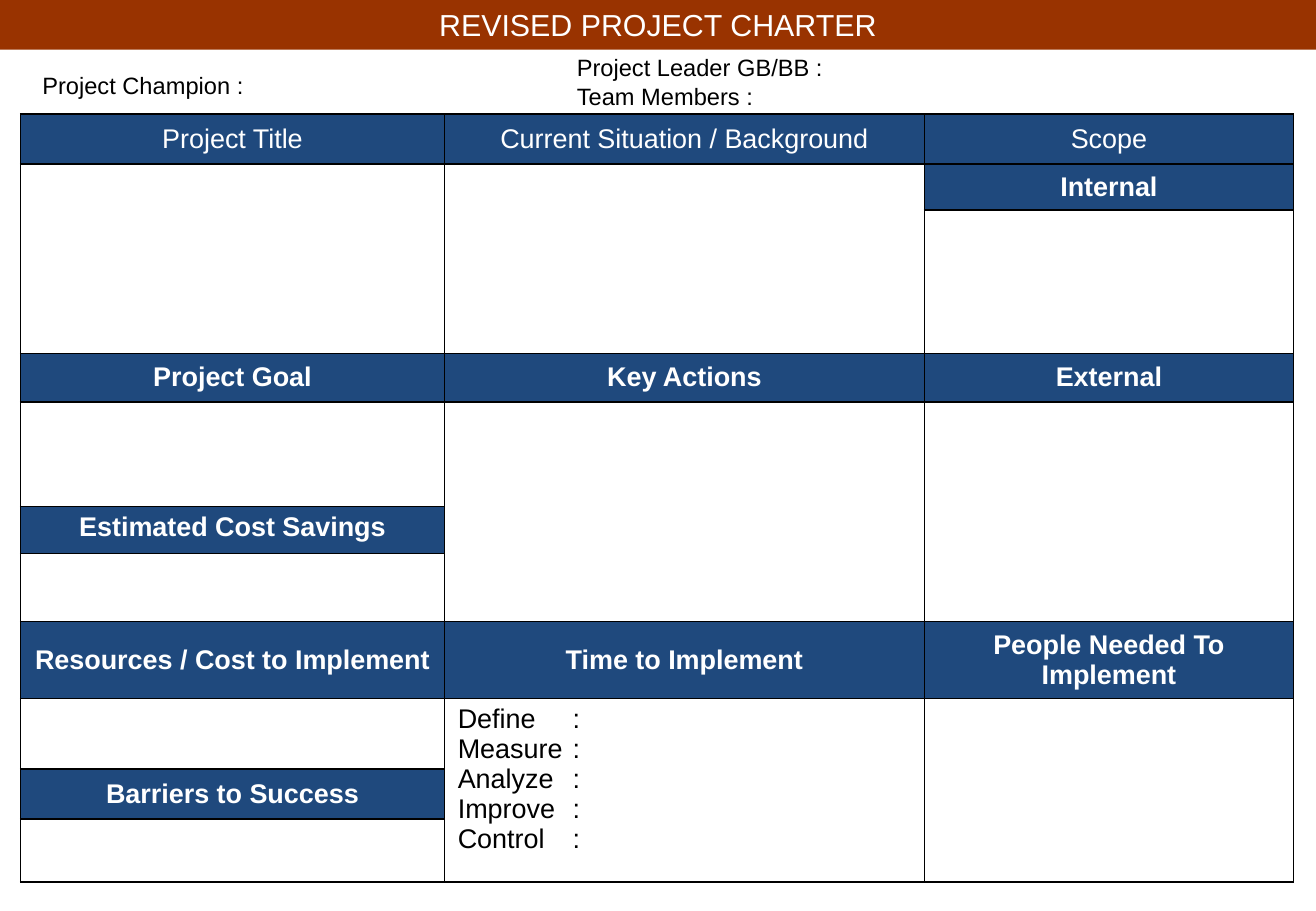
from pptx import Presentation
from pptx.dml.color import RGBColor
from pptx.enum.text import MSO_ANCHOR, MSO_AUTO_SIZE, PP_ALIGN
from pptx.oxml import parse_xml
from pptx.oxml.ns import nsdecls
from pptx.util import Pt

RUST = RGBColor(0x99, 0x33, 0x00)
NAVY = RGBColor(0x1F, 0x49, 0x7D)
WHITE = RGBColor(0xFF, 0xFF, 0xFF)
BLACK = RGBColor(0x00, 0x00, 0x00)

COLS = [251.3, 284.4, 218.9]
ROWS = [29.5, 27.4, 85, 28.8, 61.9, 28.1, 40.3, 45.6, 41.8, 29.5, 37.4]
HEADS = {
    (0, 0): "Project Title",
    (0, 1): "Current Situation / Background",
    (0, 2): "Scope",
    (1, 2): "Internal",
    (3, 0): "Project Goal",
    (3, 1): "Key Actions",
    (3, 2): "External",
    (5, 0): "Estimated Cost Savings",
    (7, 0): "Resources / Cost to Implement",
    (7, 1): "Time to Implement",
    (7, 2): "People Needed To\nImplement",
    (9, 0): "Barriers to Success",
}
SPANS = [((1, 0), (2, 0)), ((1, 1), (2, 1)), ((4, 1), (6, 1)),
         ((4, 2), (6, 2)), ((8, 1), (10, 1)), ((8, 2), (10, 2))]
PHASES = ["Define", "Measure", "Analyze", "Improve", "Control"]


def apply(item, style):
    for name, value in style.items():
        setattr(item, name, value)


class Chart:
    """Draws the project charter on one slide in a shared style."""

    def __init__(self):
        self.deck = Presentation()
        apply(self.deck, {"slide_width": Pt(780), "slide_height": Pt(540)})
        self.slide = self.deck.slides.add_slide(self.deck.slide_layouts[5])

    def text(self, frame, words, size, color, align=PP_ALIGN.LEFT, bold=False):
        frame.text = words
        for para in frame.paragraphs:
            para.alignment = align
            for run in para.runs:
                apply(run.font, {"name": "Arial", "size": Pt(size), "bold": bold})
                run.font.color.rgb = color

    def title(self, words):
        bar = self.slide.shapes.title
        apply(bar, {"left": 0, "top": 0, "width": Pt(780), "height": Pt(29.5)})
        bar.fill.solid()
        bar.fill.fore_color.rgb = RUST
        apply(bar.text_frame, {
            "margin_left": 0, "margin_right": 0,
            "margin_top": Pt(3.6), "margin_bottom": Pt(3.6),
            "vertical_anchor": MSO_ANCHOR.TOP, "word_wrap": True,
            "auto_size": MSO_AUTO_SIZE.NONE})
        self.text(bar.text_frame, words, 18, WHITE, PP_ALIGN.CENTER)

    def label(self, words, left, top, width, height):
        box = self.slide.shapes.add_textbox(Pt(left), Pt(top), Pt(width), Pt(height))
        apply(box.text_frame, {"word_wrap": False,
                               "auto_size": MSO_AUTO_SIZE.SHAPE_TO_FIT_TEXT})
        self.text(box.text_frame, words, 14, BLACK)

    def border(self, cell):
        props = cell._tc.get_or_add_tcPr()
        for side in "LRTB":
            props.append(parse_xml(
                f'<a:ln{side} {nsdecls("a")} w="{Pt(1)}"><a:solidFill>'
                f'<a:srgbClr val="{BLACK}"/></a:solidFill></a:ln{side}>'))

    def grid(self, left, top):
        frame = self.slide.shapes.add_table(
            len(ROWS), len(COLS), Pt(left), Pt(top), Pt(sum(COLS)), Pt(sum(ROWS)))
        table = frame.table
        apply(table, {"first_row": False, "horz_banding": False})
        for col, width in zip(table.columns, COLS):
            col.width = Pt(width)
        for r, height in enumerate(ROWS):
            table.rows[r].height = Pt(height)
            for c in range(len(COLS)):
                self.cell(table.cell(r, c), r, HEADS.get((r, c)))
        for start, end in SPANS:
            table.cell(*start).merge(table.cell(*end))
        return table

    def cell(self, cell, row, head):
        self.border(cell)
        cell.fill.solid()
        cell.fill.fore_color.rgb = NAVY if head else WHITE
        pad = Pt(3.6) if head else 0
        apply(cell, {"margin_left": Pt(7.9), "margin_right": Pt(7.9),
                     "margin_top": pad, "margin_bottom": pad})
        if head:
            cell.vertical_anchor = MSO_ANCHOR.TOP if row == 5 else MSO_ANCHOR.MIDDLE
            self.text(cell.text_frame, head, 16, WHITE, PP_ALIGN.CENTER, row > 0)

    def phases(self, cell):
        cell.margin_top = Pt(3.6)
        self.text(cell.text_frame, "\n".join(f"{name}\t:" for name in PHASES), 16, BLACK)
        for para in cell.text_frame.paragraphs:
            para._p.get_or_add_pPr().append(parse_xml(
                f'<a:tabLst {nsdecls("a")}><a:tab pos="{Pt(68)}" algn="l"/></a:tabLst>'))


def main():
    chart = Chart()
    chart.title("REVISED PROJECT CHARTER")
    table = chart.grid(12.2, 67.6)
    chart.phases(table.cell(8, 1))
    chart.label("Project Champion :", 18, 38.2, 134.6, 24.5)
    chart.label("Project Leader GB/BB :\nTeam Members :", 334.8, 28.1, 161.3, 41)
    chart.deck.save("out.pptx")


if __name__ == "__main__":
    main()
